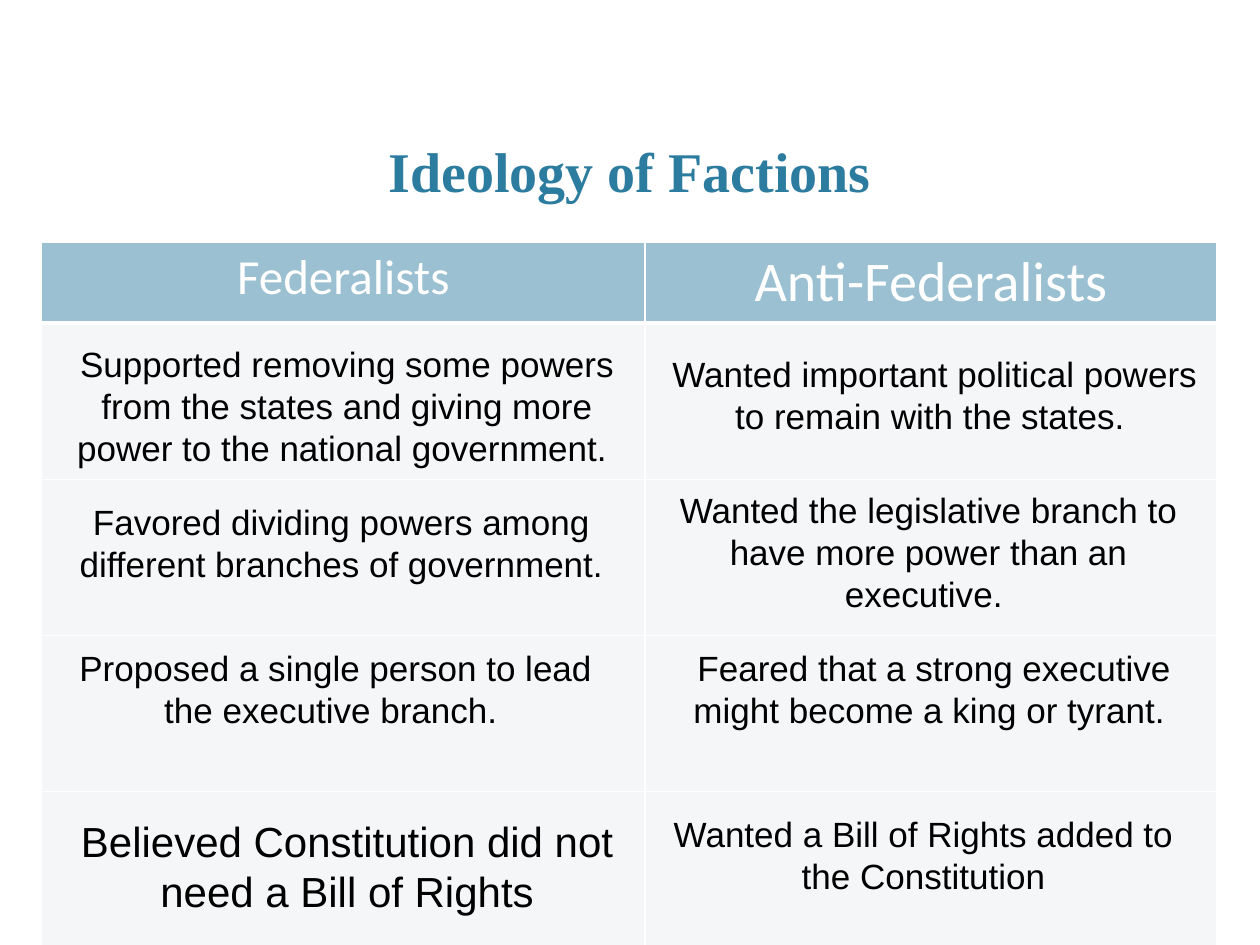
from dataclasses import dataclass
from typing import Any

from lxml.etree import SubElement
from pptx import Presentation
from pptx.dml.color import RGBColor as RGB
from pptx.enum.text import MSO_ANCHOR as Anchor, MSO_AUTO_SIZE as AutoSize, PP_ALIGN as Align
from pptx.oxml import parse_xml
from pptx.oxml.ns import nsdecls, qn
from pptx.util import Inches, Pt

COLORS = {"accent": "2C7C9F", "body": "E8ECF0", "line": "FFFFFF", "text": "000000"}
COL_WIDTHS = [4.79, 4.54]
ROW_HEIGHTS = [0.63] + [1.24] * 4
HEADERS = [("Federalists", 28), ("Anti-Federalists", 32)]
STATEMENTS = [
    (0.42, 2.67, 4.67, 1.1, 20, "Supported removing some powers from the states and giving more power to the national government. "),
    (5.17, 2.75, 4.5, 0.77, 20, "Wanted important political powers to remain with the states. "),
    (0.5, 3.92, 4.42, 0.77, 20, "Favored dividing powers among different branches of government. "),
    (5.08, 3.83, 4.58, 1.1, 20, "Wanted the legislative branch to have more power than an executive. "),
    (0.5, 5.08, 4.33, 0.77, 20, "Proposed a single person to lead the executive branch. "),
    (5.25, 5.08, 4.33, 0.77, 20, "Feared that a strong executive might become a king or tyrant. "),
    (0.42, 6.42, 4.67, 0.91, 24, "Believed Constitution did not need a Bill of Rights"),
    (5.08, 6.4, 4.5, 0.77, 20, "Wanted a Bill of Rights added to the Constitution"),
]


@dataclass
class FactionSlide:
    """Holds the slide and its style, and adds each kind of element."""

    slide: Any
    title_font: str = "Times New Roman"
    header_font: str = "Calibri"
    body_font: str = "Arial"

    def set_text(self, tf, text, size, font, color, bold=False):
        p = tf.paragraphs[0]
        p.text = text
        p.alignment = Align.CENTER
        p.font.size = Pt(size)
        p.font.name = font
        p.font.bold = bold
        p.font.color.rgb = RGB.from_string(COLORS[color])

    def title(self, text, left, top, width, height):
        sp = self.slide.shapes.title
        sp.left, sp.top, sp.width, sp.height = map(Inches, (left, top, width, height))
        tf = sp.text_frame
        tf.vertical_anchor = Anchor.BOTTOM
        self.set_text(tf, text, 32, self.title_font, "accent", True)

    def text(self, left, top, width, height, size, text):
        box = self.slide.shapes.add_textbox(*map(Inches, (left, top, width, height)))
        tf = box.text_frame
        tf.word_wrap = True
        tf.auto_size = AutoSize.SHAPE_TO_FIT_TEXT
        self.set_text(tf, text, size, self.body_font, "text")

    def style_cell(self, cell, color, opacity, bottom):
        cell.fill.solid()
        cell.fill.fore_color.rgb = RGB.from_string(COLORS[color])
        tcPr = cell._tc.get_or_add_tcPr()
        clr = tcPr.find(qn("a:solidFill")).find(qn("a:srgbClr"))
        SubElement(clr, qn("a:alpha"), val=str(opacity * 1000))
        widths = {"lnL": 1, "lnR": 1, "lnT": 1, "lnB": bottom}
        for i, (side, width) in enumerate(widths.items()):
            tcPr.insert(i, parse_xml(
                f'<a:{side} {nsdecls("a")} w="{Pt(width)}"><a:solidFill>'
                f'<a:srgbClr val="{COLORS["line"]}"/></a:solidFill></a:{side}>'))

    def table(self, left, top, headers, col_widths, row_heights):
        size = map(Inches, (left, top, sum(col_widths), sum(row_heights)))
        table = self.slide.shapes.add_table(len(row_heights), len(col_widths), *size).table
        table.horz_banding = False
        for col, width in zip(table.columns, col_widths):
            col.width = Inches(width)
        for i, (row, height) in enumerate(zip(table.rows, row_heights)):
            row.height = Inches(height)
            for cell in row.cells:
                self.style_cell(cell, *(("body", 47, 1) if i else ("accent", 48, 3)))
        for cell, (text, size) in zip(table.rows[0].cells, headers):
            self.set_text(cell.text_frame, text, size, self.header_font, "line")


def main():
    prs = Presentation()
    prs.slide_width, prs.slide_height = Inches(10), Inches(7.5)
    s = FactionSlide(prs.slides.add_slide(prs.slide_layouts[5]))
    s.title("Ideology of Factions", 0.75, 1, 8.5, 0.67)
    s.table(0.33, 1.92, HEADERS, COL_WIDTHS, ROW_HEIGHTS)
    for statement in STATEMENTS:
        s.text(*statement)
    prs.save("out.pptx")


if __name__ == "__main__":
    main()
